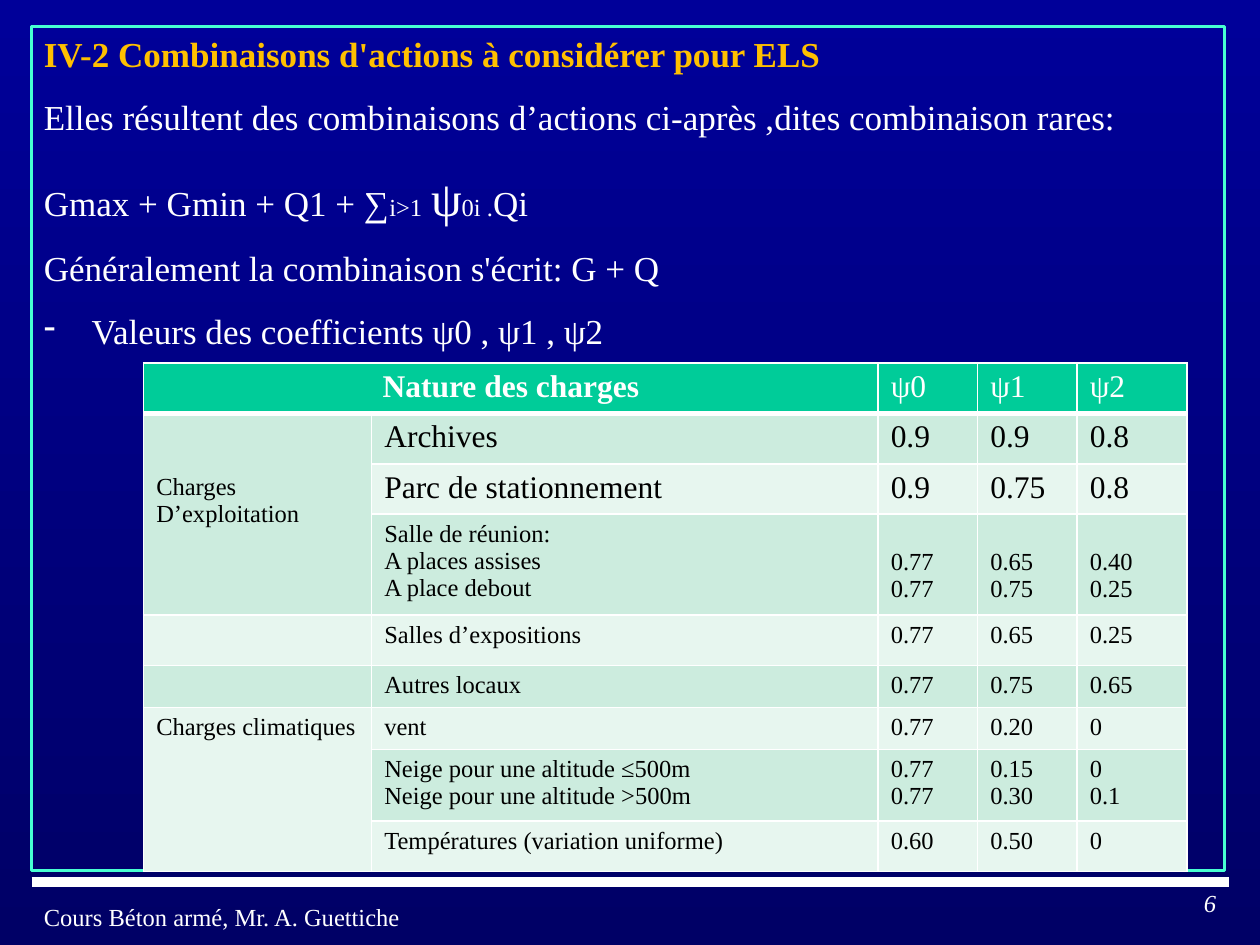
from lxml import etree
from pptx import Presentation
from pptx.dml.color import RGBColor
from pptx.enum.shapes import MSO_CONNECTOR, MSO_SHAPE
from pptx.enum.text import MSO_ANCHOR, PP_ALIGN
from pptx.oxml.ns import qn
from pptx.util import Inches, Pt

LEFT, RIGHT, MID, JUST = PP_ALIGN.LEFT, PP_ALIGN.RIGHT, PP_ALIGN.CENTER, PP_ALIGN.JUSTIFY
TOP = MSO_ANCHOR.TOP
RECT, LINE = MSO_SHAPE.RECTANGLE, MSO_CONNECTOR.STRAIGHT
WHITE, BLACK, GOLD, AQUA = "FFFFFF", "000000", "FFC000", "47FFD1"
GREEN, MINT, PALE = "00CC99", "CCECDE", "E7F6EF"


def color(code):
    return RGBColor.from_string(code)


class Deck:
    font = "Times New Roman"

    def __init__(self):
        self.prs = Presentation()
        self.prs.slide_width, self.prs.slide_height = Inches(10), Inches(7.5)
        self.slide = self.prs.slides.add_slide(self.prs.slide_layouts[6])

    def back(self, first, last):
        fill = self.slide.background.fill
        fill.gradient()
        fill.gradient_angle = 270
        for stop, code, pos in zip(fill.gradient_stops, (first, last), (0, 1)):
            stop.color.rgb = color(code)
            stop.position = pos

    def style(self, font, code=WHITE, **look):
        look = {"name": self.font, "size": 14, "bold": False, **look}
        look["size"] = Pt(look["size"])
        for name, value in look.items():
            setattr(font, name, value)
        font.color.rgb = color(code)

    def put(self, frame, paras, align=LEFT, **look):
        """Each paragraph is a string or a list of (text, size) runs."""
        for i, runs in enumerate(paras):
            para = frame.paragraphs[0] if i == 0 else frame.add_paragraph()
            para.alignment = align
            if isinstance(runs, str):
                runs = [(runs, look.get("size", 14))]
            for text, size in runs:
                run = para.add_run()
                run.text = text
                self.style(run.font, **{**look, "size": size})

    def label(self, box, text, align=LEFT, **look):
        frame = self.slide.shapes.add_textbox(*map(Inches, box)).text_frame
        frame.word_wrap = True
        self.put(frame, [text], align, **look)

    def rule(self, start, end, code, width):
        line = self.slide.shapes.add_connector(LINE, *map(Inches, start + end))
        line.line.color.rgb = color(code)
        line.line.width = Pt(width)
        etree.SubElement(line._element.spPr, qn("a:effectLst"))

    def panel(self, box, code, width):
        shape = self.slide.shapes.add_shape(RECT, *map(Inches, box))
        shape.shadow.inherit = False
        shape.fill.background()
        shape.line.color.rgb = color(code)
        shape.line.width = Pt(width)
        frame = shape.text_frame
        frame.word_wrap = True
        frame.vertical_anchor = TOP
        return frame

    def bullet(self, para, mark, indent):
        props = para._p.get_or_add_pPr()
        props.set("marL", str(Inches(indent)))
        props.set("indent", str(-Inches(indent)))
        etree.SubElement(props, qn("a:buChar"), char=mark)

    def edges(self, cell, code, base):
        props = cell._tc.get_or_add_tcPr()
        for i, (side, width) in enumerate({"L": 1, "R": 1, "T": 1, "B": base}.items()):
            line = etree.Element(qn("a:ln" + side), w=str(Pt(width)))
            fill = etree.SubElement(line, qn("a:solidFill"))
            etree.SubElement(fill, qn("a:srgbClr"), val=code)
            props.insert(i, line)

    def grid(self, spot, cols, rows):
        size = sum(cols), sum(rows)
        table = self.slide.shapes.add_table(
            len(rows), len(cols), *map(Inches, spot + size)).table
        for col, width in zip(table.columns, cols):
            col.width = Inches(width)
        for row, height in zip(table.rows, rows):
            row.height = Inches(height)
        for r in range(len(rows)):
            for c in range(len(cols)):
                cell = table.cell(r, c)
                cell.fill.solid()
                cell.fill.fore_color.rgb = color(GREEN if r == 0 else MINT if r % 2 else PALE)
                self.edges(cell, WHITE, 1 if r else 3)
                self.style(cell.text_frame.paragraphs[0].font)
        return table


def main():
    deck = Deck()
    deck.back("000099", "000066")

    # Footer
    deck.rule((0.25, 7), (9.75, 7), WHITE, 6)
    deck.label((0.25, 7.11, 5.17, 0.5), "Cours Béton armé, Mr. A. Guettiche")
    deck.label((9.17, 7, 0.58, 0.5), "6", RIGHT, italic=True)

    # Framed text
    frame = deck.panel((0.25, 0.21, 9.47, 6.7), AQUA, 1.75)
    deck.put(frame, [
        "IV-2 Combinaisons d'actions à considérer pour ELS",
        "Elles résultent des combinaisons d’actions ci-après ,dites combinaison rares:",
        [("Gmax + Gmin + Q1 + ∑", 20), ("i>1", 14), (" ", 20),
         ("ψ", 28), ("0i .", 14), ("Qi", 20)],
        "Généralement la combinaison s'écrit: G + Q",
        "Valeurs des coefficients ψ0 , ψ1 , ψ2",
    ], JUST, size=20)
    title, *body = frame.paragraphs
    deck.style(title.runs[0].font, GOLD, size=20, bold=True)
    for para in body:
        para.line_spacing = 1.5
    deck.bullet(body[-1], "-", 0.38)

    # Table of coefficients; "\n" parts the lines of a cell
    data = [
        ("Archives", "0.9", "0.9", "0.8"),
        ("Parc de stationnement", "0.9", "0.75", "0.8"),
        ("Salle de réunion:\nA places assises\nA place debout",
         "0.77\n0.77", "0.65\n0.75", "0.40\n0.25"),
        ("Salles d’expositions", "0.77", "0.65", "0.25"),
        ("Autres locaux", "0.77", "0.75", "0.65"),
        ("vent", "0.77", "0.20", "0"),
        ("Neige pour une altitude ≤500m\nNeige pour une altitude >500m",
         "0.77\n0.77", "0.15\n0.30", "0\n0.1"),
        ("Températures (variation uniforme)", "0.60", "0.50", "0"),
    ]
    table = deck.grid((1.14, 2.88), (1.81, 4.02, 0.79, 0.79, 0.87),
                      (0.4, 0.4, 0.4, 0.8, 0.4, 0.33, 0.33, 0.56, 0.4))
    for first, last in (((0, 0), (0, 1)), ((1, 0), (3, 0)), ((6, 0), (8, 0))):
        table.cell(*first).merge(table.cell(*last))

    # Headings
    deck.put(table.cell(0, 0).text_frame, ["Nature des charges"], MID, size=18, bold=True)
    for c, text in enumerate(("ψ0", "ψ1", "ψ2"), 2):
        deck.put(table.cell(0, c).text_frame, [text], size=18)
    group = table.cell(1, 0)
    group.margin_top = Inches(0.48)
    deck.put(group.text_frame, ["Charges", "D’exploitation"], code=BLACK)
    deck.put(table.cell(6, 0).text_frame, ["Charges climatiques"], code=BLACK)

    # Values
    for r, row in enumerate(data, 1):
        for c, text in enumerate(row, 1):
            cell = table.cell(r, c)
            deck.put(cell.text_frame, text.split("\n"), code=BLACK, size=18 if r < 3 else 14)
            if r == 3 and c > 1:
                cell.margin_top = Inches(0.27)

    deck.prs.save("out.pptx")


if __name__ == "__main__":
    main()
